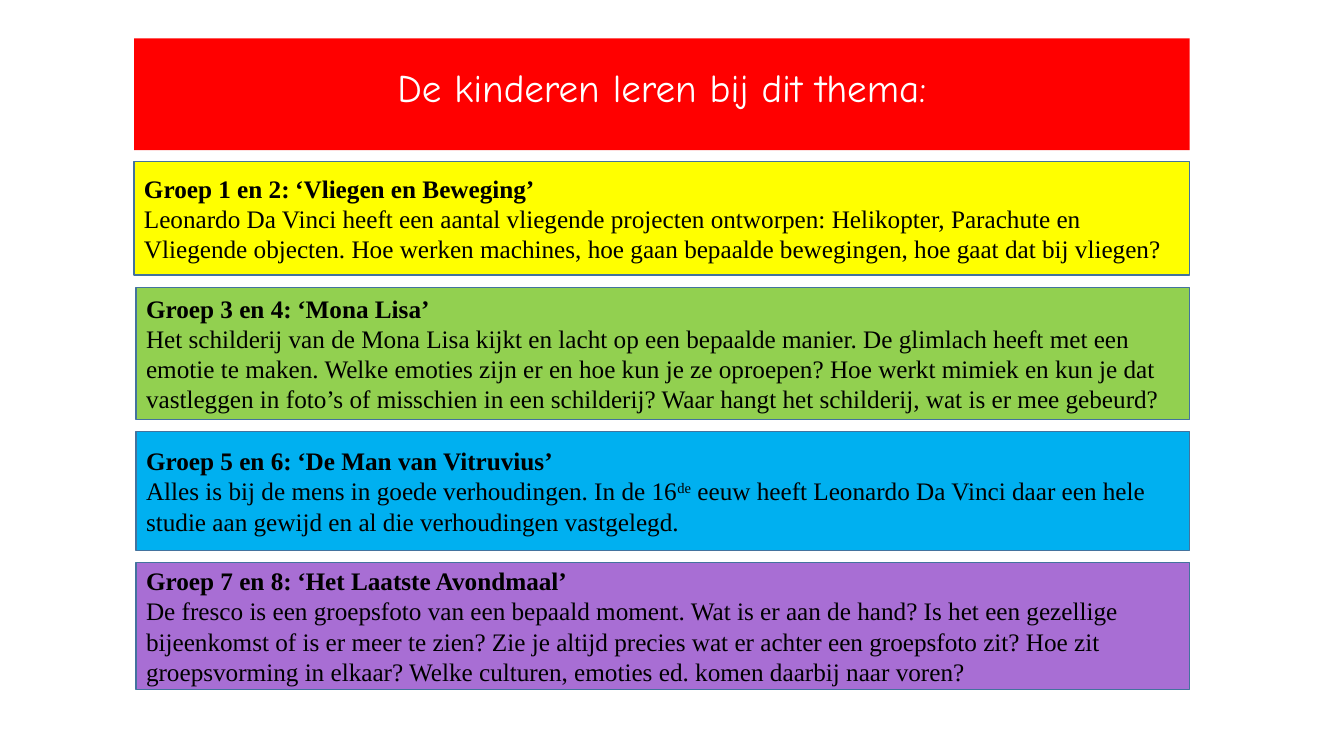
from dataclasses import dataclass
from pptx import Presentation
from pptx.dml.color import RGBColor
from pptx.enum.shapes import MSO_SHAPE
from pptx.enum.text import MSO_ANCHOR, PP_ALIGN
from pptx.util import Inches, Pt


@dataclass(frozen=True)
class Theme:
    red: str = "FF0000"
    yellow: str = "FFFF00"
    green: str = "92D050"
    blue: str = "00B0F0"
    purple: str = "A86ED4"
    edge: str = "43739E"
    black: str = "000000"
    white: str = "FFFFFF"
    head: str = "Comic Neue"
    body: str = "Times New Roman"
    big: float = 27.9
    small: float = 18


class Deck:
    def __init__(self, theme):
        self.theme = theme
        self.prs = Presentation()
        self.prs.slide_width = Inches(13.33)
        self.prs.slide_height = Inches(7.5)
        self.slide = self.prs.slides.add_slide(self.prs.slide_layouts[6])

    def box(self, left, top, width, height, fill):
        shape = self.slide.shapes.add_shape(
            MSO_SHAPE.RECTANGLE, Inches(left), Inches(top), Inches(width), Inches(height))
        shape.shadow.inherit = False
        shape.fill.solid()
        shape.fill.fore_color.rgb = RGBColor.from_string(fill)
        shape.text_frame.word_wrap = True
        shape.text_frame.vertical_anchor = MSO_ANCHOR.MIDDLE
        return shape

    def style(self, para, name, size, color, bold=False, align=PP_ALIGN.LEFT):
        para.alignment = align
        font = para.font
        font.name, font.size, font.bold = name, Pt(size), bold
        font.color.rgb = RGBColor.from_string(color)

    def title(self, text, left, top, width, height):
        look = self.theme
        shape = self.box(left, top, width, height, look.red)
        shape.line.fill.background()
        # The text sits a little above the middle
        shape.text_frame.margin_bottom = Inches(0.14)
        para = shape.text_frame.paragraphs[0]
        para.text = text
        para.line_spacing = 0.9
        self.style(para, look.head, look.big, look.white, align=PP_ALIGN.CENTER)

    def panel(self, group, topic, parts, left, top, height, fill):
        look = self.theme
        shape = self.box(left, top, RIGHT - left, height, fill)
        shape.line.color.rgb = RGBColor.from_string(look.edge)
        shape.line.width = Pt(1)
        frame = shape.text_frame
        head = frame.paragraphs[0]
        head.text = f"Groep {group}:\t‘{topic}’"
        self.style(head, look.body, look.small, look.black, bold=True)
        # Every second part is raised
        para = frame.add_paragraph()
        for i, part in enumerate(parts):
            run = para.add_run()
            run.text = part
            if i % 2:
                run.font._element.set("baseline", "30000")
        self.style(para, look.body, look.small, look.black)


RIGHT = 11.8
GAP = 0.12
THEME = Theme()

# Group, topic, text parts, left, height, fill
PANELS = [
    ("1 en 2", "Vliegen en Beweging",
     ["Leonardo Da Vinci heeft een aantal vliegende projecten ontworpen: Helikopter, "
      "Parachute en Vliegende objecten. Hoe werken machines, hoe gaan bepaalde "
      "bewegingen, hoe gaat dat bij vliegen?"], 1.33, 1.13, THEME.yellow),
    ("3 en 4", "Mona Lisa",
     ["Het schilderij van de Mona Lisa kijkt en lacht op een bepaalde manier. De glimlach "
      "heeft met een emotie te maken. Welke emoties zijn er en hoe kun je ze oproepen? "
      "Hoe werkt mimiek en kun je dat vastleggen in foto’s of misschien in een schilderij? "
      "Waar hangt het schilderij, wat is er mee gebeurd?"], 1.35, 1.31, THEME.green),
    ("5 en 6", "De Man van Vitruvius",
     ["Alles is bij de mens in goede verhoudingen. In de 16", "de",
      " eeuw heeft Leonardo Da Vinci daar een hele studie aan gewijd en al die "
      "verhoudingen vastgelegd."], 1.35, 1.18, THEME.blue),
    ("7 en 8", "Het Laatste Avondmaal",
     ["De fresco is een groepsfoto van een bepaald moment. Wat is er aan de hand? Is het "
      "een gezellige bijeenkomst of is er meer te zien? Zie je altijd precies wat er achter "
      "een groepsfoto zit? Hoe zit groepsvorming in elkaar? Welke culturen, emoties ed. "
      "komen daarbij naar voren?"], 1.35, 1.26, THEME.purple),
]


def main():
    deck = Deck(THEME)
    # Title bar
    deck.title("De kinderen leren bij dit thema:", 1.33, 0.38, 10.47, 1.11)
    # Stacked group panels
    top = 1.6
    for group, topic, parts, left, height, fill in PANELS:
        deck.panel(group, topic, parts, left, top, height, fill)
        top += height + GAP
    deck.prs.save("out.pptx")


if __name__ == "__main__":
    main()
